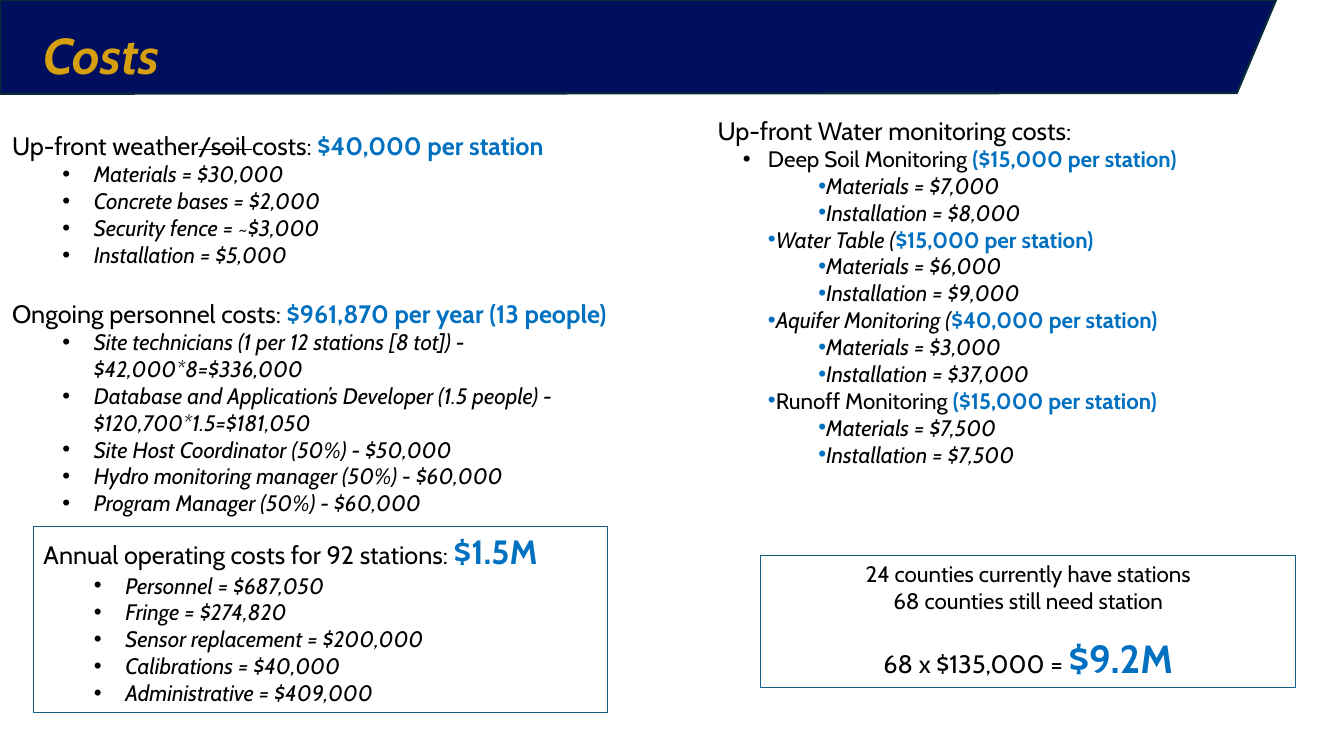
from dataclasses import dataclass

from lxml.etree import SubElement
from pptx import Presentation
from pptx.dml.color import RGBColor
from pptx.enum.shapes import MSO_SHAPE
from pptx.enum.text import MSO_ANCHOR, PP_ALIGN
from pptx.oxml.ns import qn
from pptx.util import Pt


@dataclass(frozen=True)
class Theme:
    navy: RGBColor = RGBColor(0x00, 0x0F, 0x5D)
    banner_edge: RGBColor = RGBColor(0x09, 0x2A, 0x39)
    gold: RGBColor = RGBColor(0xD5, 0x9F, 0x0F)
    black: RGBColor = RGBColor(0x00, 0x00, 0x00)
    blue: RGBColor = RGBColor(0x00, 0x70, 0xC0)
    frame: RGBColor = RGBColor(0x15, 0x60, 0x82)
    font: str = "Cabin"
    bullet_font: str = "Arial"
    title: int = 36
    heading: int = 18
    body: int = 16
    total: int = 24
    grand_total: int = 28


THEME = Theme()


# Text helpers
def add_para(frame, size, color=THEME.black, italic=False, bold=False, before=0):
    """Add a paragraph, using the empty first one if it is still free."""
    first = frame.paragraphs[0]
    para = first if not first.runs else frame.add_paragraph()
    para.space_before = Pt(before)
    font = para.font
    font.name, font.size, font.italic, font.bold = THEME.font, Pt(size), italic, bold
    font.color.rgb = color
    return para


def add_span(para, text):
    span = para.add_run()
    span.text = text
    return span


def add_amount(para, text, size=None):
    """Add a figure in bold blue."""
    span = add_span(para, text)
    span.font.bold, span.font.italic = True, False
    span.font.color.rgb = THEME.blue
    if size:
        span.font.size = Pt(size)


def set_bullet(para, left, hang, color=THEME.black):
    props = para._p.get_or_add_pPr()
    props.set("marL", str(Pt(left)))
    props.set("indent", str(-Pt(hang)))
    # Colour, font and sign go before the default run properties
    defaults = props.find(qn("a:defRPr"))
    fill = SubElement(props, qn("a:buClr"))
    SubElement(fill, qn("a:srgbClr"), val=str(color))
    face = SubElement(props, qn("a:buFont"), typeface=THEME.bullet_font)
    sign = SubElement(props, qn("a:buChar"), char="•")
    for part in (fill, face, sign):
        defaults.addprevious(part)


def add_items(frame, items):
    for item in items:
        para = add_para(frame, THEME.body, italic=True)
        add_span(para, item)
        set_bullet(para, 58.5, 22.5)


def add_text_area(page, box):
    frame = page.shapes.add_textbox(*map(Pt, box)).text_frame
    frame.word_wrap = True
    return frame


def add_framed_area(page, box):
    shape = page.shapes.add_shape(MSO_SHAPE.RECTANGLE, *map(Pt, box))
    shape.shadow.inherit = False
    shape.fill.background()
    shape.line.color.rgb = THEME.frame
    shape.line.width = Pt(0.75)
    frame = shape.text_frame
    frame.word_wrap = True
    frame.vertical_anchor = MSO_ANCHOR.TOP
    return frame


# Banner with the slide title
def add_banner(page, box, title):
    left, top, width, height = box
    outline = page.shapes.build_freeform(Pt(left), Pt(top))
    outline.add_line_segments([
        (Pt(left + width), Pt(top)),
        (Pt(left + width - 28), Pt(top + height - 0.5)),
        (Pt(left), Pt(top + height)),
    ], close=True)
    banner = outline.convert_to_shape()
    banner.shadow.inherit = False
    banner.fill.solid()
    banner.fill.fore_color.rgb = THEME.navy
    banner.line.color.rgb = THEME.banner_edge
    banner.line.width = Pt(1.5)
    frame = add_text_area(page, (left + 24, top + 13.5, 563, 51))
    add_span(add_para(frame, THEME.title, THEME.gold, italic=True, bold=True), title)


# Station and personnel costs
def add_station_costs(page, box):
    frame = add_text_area(page, box)
    para = add_para(frame, THEME.heading)
    add_span(para, "Up-front weather")
    add_span(para, "/soil ").font._element.set("strike", "sngStrike")
    add_span(para, "costs: ")
    add_amount(para, "$40,000 per station")
    add_items(frame, [
        "Materials = $30,000",
        "Concrete bases = $2,000",
        "Security fence = ~$3,000",
        "Installation = $5,000",
    ])

    para = add_para(frame, THEME.heading, before=21.5)
    add_span(para, "Ongoing personnel costs: ")
    add_amount(para, "$961,870 per year (13 people)")
    add_items(frame, [
        "Site technicians (1 per 12 stations [8 tot]) - $42,000*8=$336,000",
        "Database and Application’s Developer (1.5 people) - $120,700*1.5=$181,050",
        "Site Host Coordinator (50%) - $50,000",
        "Hydro monitoring manager (50%) - $60,000",
        "Program Manager (50%) - $60,000",
    ])


# Yearly operating costs
def add_operating_costs(page, box):
    frame = add_framed_area(page, box)
    para = add_para(frame, THEME.heading)
    para.alignment = PP_ALIGN.LEFT
    add_span(para, "Annual operating costs for 92 stations: ")
    add_amount(para, "$1.5M", THEME.total)
    add_items(frame, [
        "Personnel = $687,050",
        "Fringe = $274,820",
        "Sensor replacement = $200,000",
        "Calibrations = $40,000",
        "Administrative = $409,000",
    ])
    for para in frame.paragraphs:
        para.alignment = PP_ALIGN.LEFT


# Water monitoring costs
def add_water_costs(page, box):
    frame = add_text_area(page, box)
    add_span(add_para(frame, THEME.heading), "Up-front Water monitoring costs:")
    systems = [
        ("Deep Soil Monitoring ", "($15,000 per station)", False, "$7,000", "$8,000"),
        ("Water Table (", "$15,000 per station)", True, "$6,000", "$9,000"),
        ("Aquifer Monitoring (", "$40,000 per station)", True, "$3,000", "$37,000"),
        ("Runoff Monitoring ", "($15,000 per station)", False, "$7,500", "$7,500"),
    ]
    for number, (name, amount, italic, materials, installation) in enumerate(systems):
        para = add_para(frame, THEME.body, italic=italic)
        add_span(para, name)
        add_amount(para, amount)
        if number == 0:
            set_bullet(para, 36, 18)
        else:
            set_bullet(para, 41.6, 5.6, THEME.blue)
        for label, cost in (("Materials", materials), ("Installation", installation)):
            para = add_para(frame, THEME.body, italic=True)
            add_span(para, f"{label} = {cost}")
            set_bullet(para, 77.6, 5.6, THEME.blue)


# Cost of the missing counties
def add_county_total(page, box):
    frame = add_framed_area(page, box)
    for line in ("24 counties currently have stations", "68 counties still need station"):
        add_span(add_para(frame, THEME.body), line)
    para = add_para(frame, THEME.heading, before=14.5)
    add_span(para, "68 x $135,000 = ")
    add_amount(para, "$9.2M", THEME.grand_total)
    for para in frame.paragraphs:
        para.alignment = PP_ALIGN.CENTER


def main():
    deck = Presentation()
    deck.slide_width, deck.slide_height = Pt(960), Pt(540)
    page = deck.slides.add_slide(deck.slide_layouts[6])
    add_banner(page, (0, 0, 911.5, 67), "Costs")
    add_station_costs(page, (1.5, 89.5, 469, 286))
    add_operating_costs(page, (24, 376, 410, 133))
    add_water_costs(page, (505.5, 78.5, 427, 281))
    add_county_total(page, (543.5, 396.5, 382, 94.5))
    deck.save("out.pptx")


if __name__ == "__main__":
    main()
